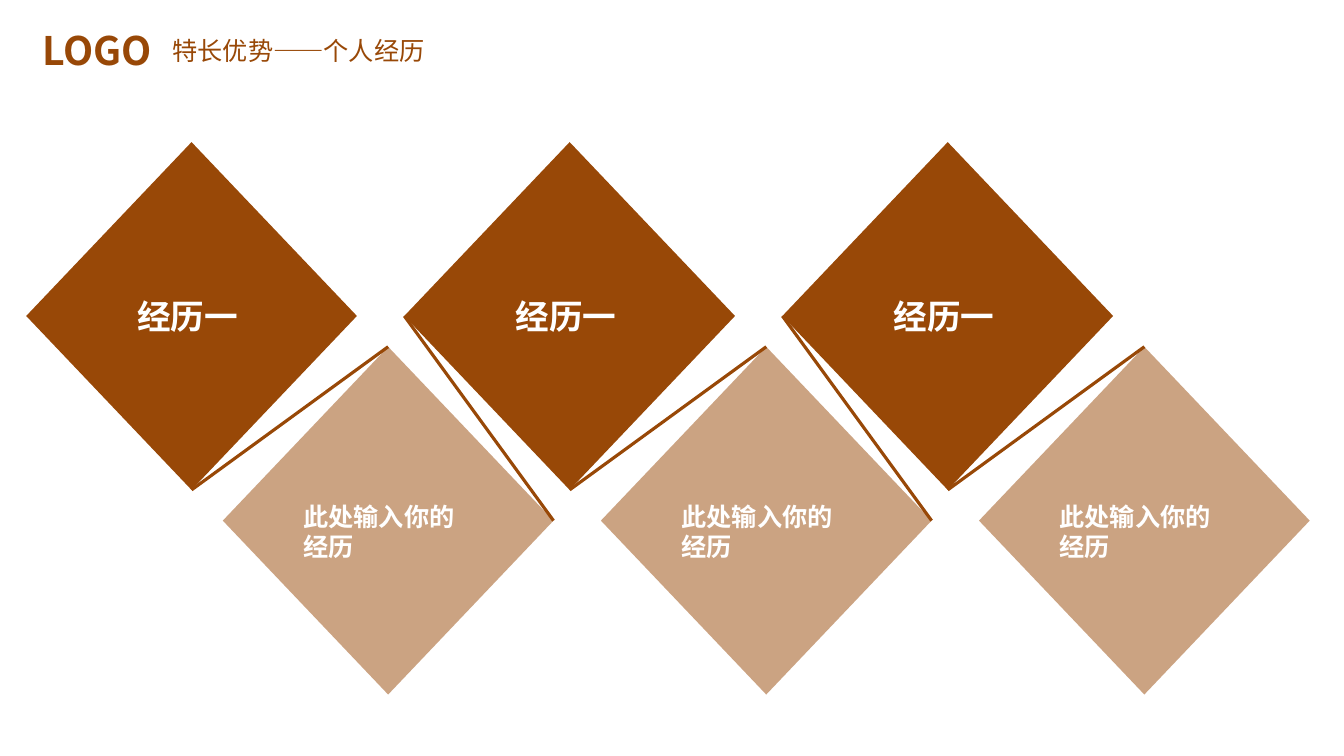
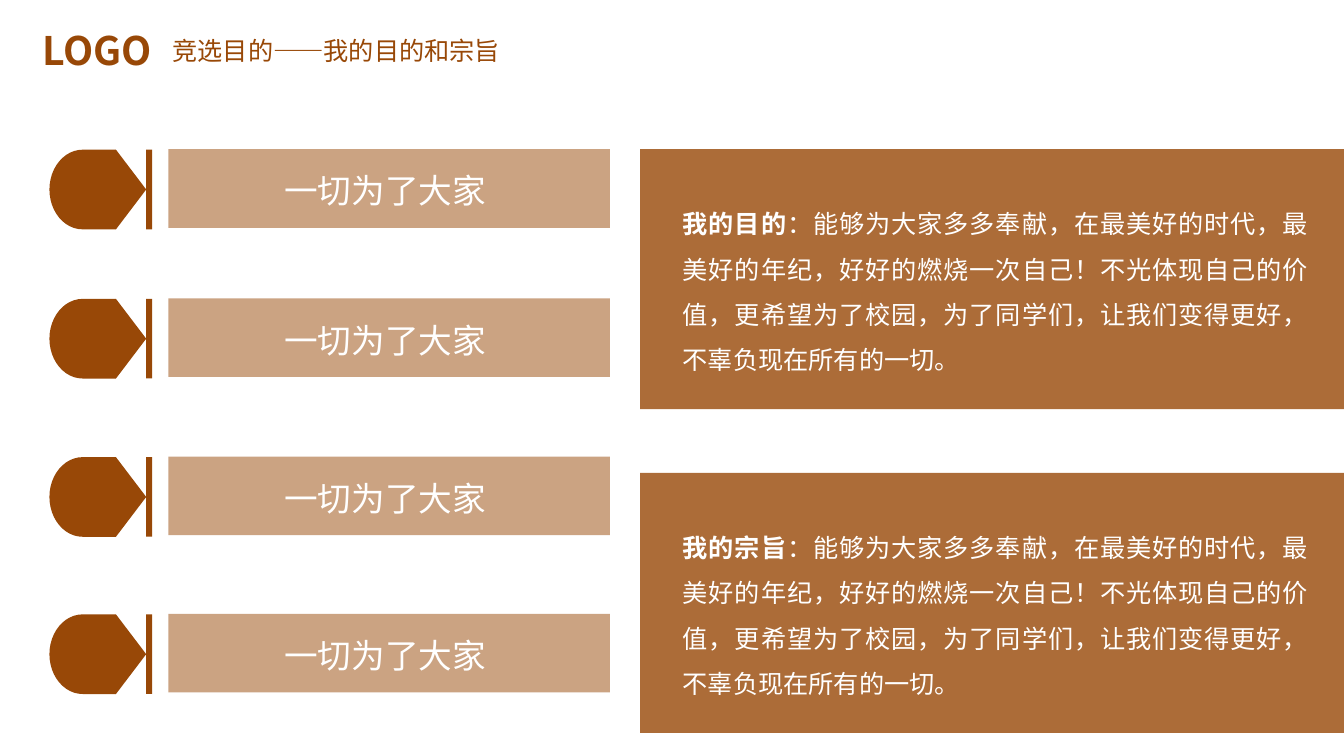
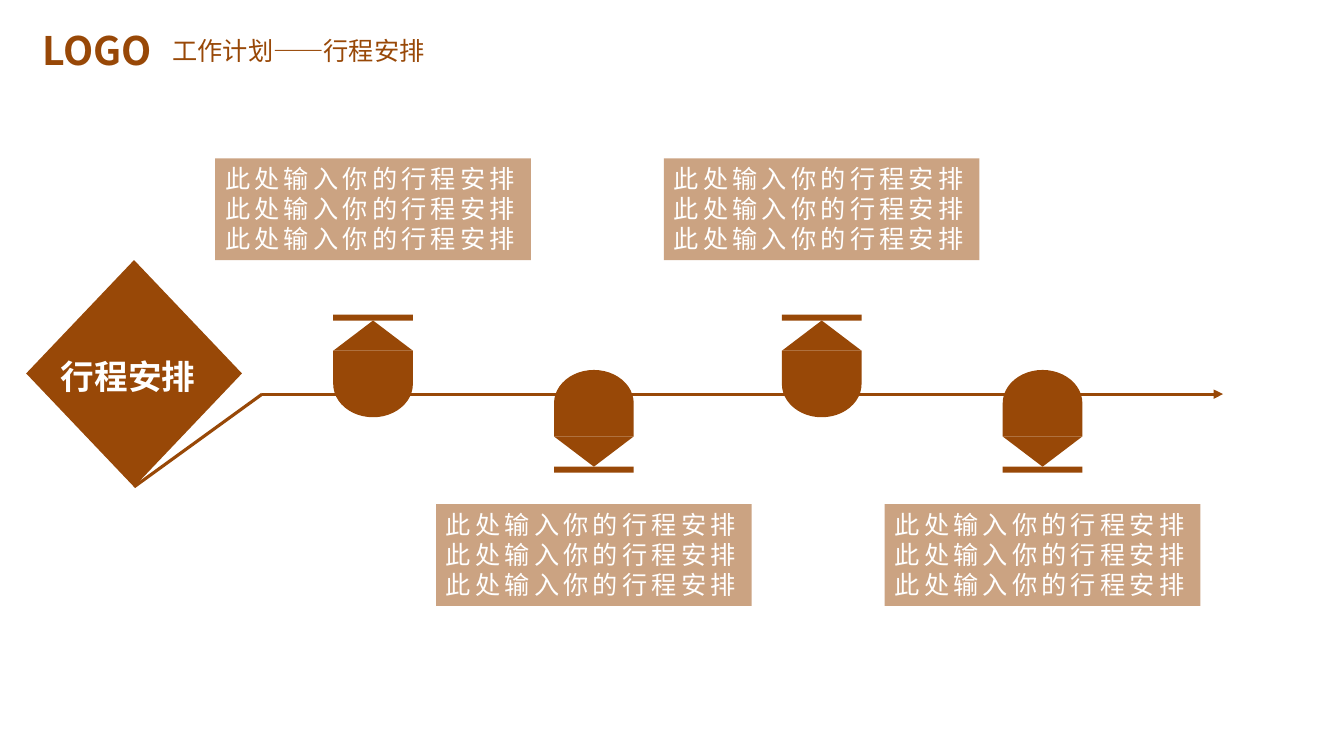
import math

import pptx
import pptx.dml.color
import pptx.enum.shapes
import pptx.enum.text
import pptx.oxml
import pptx.oxml.ns
import pptx.util

# Shared look
WIDTH, HEIGHT = 13.33, 7.5
FONT = "Noto Sans CJK SC"
BROWN, WHITE = "984807", "FFFFFF"
LINE_WIDTH = 2.25
LEFT = 0.26
TOP = 1.48

KIND = pptx.enum.shapes.MSO_SHAPE
ALIGN = pptx.enum.text.PP_ALIGN
inches = pptx.util.Inches
qualified = pptx.oxml.ns.qn


def color(hex_text):
    return pptx.dml.color.RGBColor.from_string(hex_text)


def add_child(parent, tag, **attributes):
    child = pptx.oxml.parse_xml(f"<{tag} {pptx.oxml.ns.nsdecls('a')}/>")
    for name, value in attributes.items():
        child.set(name, str(value))
    parent.append(child)
    return child


# Text
def write(frame, *lines, size=18, ink=WHITE, bold=False, align=ALIGN.LEFT,
          lead="", spacing=None, tracking=0, wrap=True,
          margins=(0.1, 0.05, 0.1, 0.05)):
    """Fill a text frame; lead is a bold opening, margins are left, top, right, bottom."""
    frame.word_wrap = wrap
    frame.auto_size = pptx.enum.text.MSO_AUTO_SIZE.NONE
    frame.vertical_anchor = pptx.enum.text.MSO_ANCHOR.TOP
    (frame.margin_left, frame.margin_top,
     frame.margin_right, frame.margin_bottom) = map(inches, margins)
    for index, line in enumerate(lines):
        para = frame.add_paragraph() if index else frame.paragraphs[0]
        para.alignment = align
        if spacing:
            para.line_spacing = spacing
        for text, heavy in ((lead, True), (line, bold)):
            if not text:
                continue
            span = para.add_run()
            span.text = text
            span.font.size = pptx.util.Pt(size)
            span.font.bold = heavy
            span.font.color.rgb = color(ink)
            span.font.name = FONT
            properties = span.font._element
            add_child(properties, "a:ea", typeface=FONT)
            if tracking:
                properties.set("spc", str(tracking * 100))


def add_text(page, left, top, width, height, *lines, **look):
    box = page.shapes.add_textbox(*map(inches, (left, top, width, height)))
    write(box.text_frame, *lines, **look)


# Shapes and lines
def add_shape(shapes, kind, left, top, width, height, opacity=100, rotation=0):
    shape = shapes.add_shape(kind, *map(inches, (left, top, width, height)))
    shape.shadow.inherit = False
    shape.fill.solid()
    shape.fill.fore_color.rgb = color(BROWN)
    shape.line.fill.background()
    shape.rotation = rotation % 360
    if opacity < 100:
        fill = shape.element.spPr.find(".//" + qualified("a:srgbClr"))
        add_child(fill, "a:alpha", val=opacity * 1000)
    return shape


def add_line(page, start, end, arrow=False):
    line = page.shapes.add_connector(
        pptx.enum.shapes.MSO_CONNECTOR.STRAIGHT, *map(inches, start + end))
    line.line.color.rgb = color(BROWN)
    line.line.width = pptx.util.Pt(LINE_WIDTH)
    if arrow:
        add_child(line.line._get_or_add_ln(), "a:tailEnd", type="triangle")
    add_child(line._element.spPr, "a:effectLst")


def add_pencil(page, tail_x, tail_y, angle):
    """Round body, tip and bar in a row from the tail; angle 0 points right."""
    across = 0.79
    group = page.shapes.add_group_shape()
    parts = (  # kind, distance of centre from tail, width, height, turn
        (KIND.RECTANGLE, 0.99, 0.06, across, 0),
        (KIND.FLOWCHART_DELAY, 0.33, 0.66, across, 180),
        (KIND.ISOSCELES_TRIANGLE, 0.81, across, 0.3, 90),
    )
    for kind, distance, width, height, turn in parts:
        center_x = tail_x + distance * math.cos(math.radians(angle))
        center_y = tail_y + distance * math.sin(math.radians(angle))
        add_shape(group.shapes, kind, center_x - width / 2, center_y - height / 2,
                  width, height, rotation=angle + turn)


def add_page(deck, heading):
    page = deck.slides.add_slide(deck.slide_layouts[5])
    title = page.shapes.title
    title.left, title.top, title.width, title.height = map(inches, (1.61, 0.3, 3.53, 0.4))
    write(title.text_frame, heading, ink=BROWN, wrap=False)
    add_text(page, LEFT, 0.21, 1.41, 0.57, "LOGO",
             size=28, ink=BROWN, bold=True, align=ALIGN.CENTER)
    return page


# Slides
def build_experience(deck):
    page = add_page(deck, "特长优势——个人经历")
    width, height, pitch, count = 3.28, 3.45, 3.75, 3
    upper_top, lower_top, shift = 1.41, 3.44, 1.95
    columns = [LEFT + pitch * index for index in range(count)]
    for left in columns:
        add_shape(page.shapes, KIND.DIAMOND, left, upper_top, width, height)
        add_text(page, left + 0.7, upper_top + 1.48, 1.88, 0.5, "经历一 ",
                 size=24, bold=True, align=ALIGN.CENTER)
        add_shape(page.shapes, KIND.DIAMOND, left + shift, lower_top, width, height, opacity=50)
        add_text(page, left + shift + 0.7, lower_top + 1.48, 1.88, 0.71,
                 "此处输入你的经历", bold=True)
    # Zigzag from corner to corner
    for index, left in enumerate(columns):
        middle = left + width / 2
        add_line(page, (middle, upper_top + height), (middle + shift, lower_top))
        if index < count - 1:
            add_line(page, (left + shift + width, lower_top + height / 2),
                     (left + pitch, upper_top + height / 2))


def build_purpose(deck):
    page = add_page(deck, "竞选目的——我的目的和宗旨")
    for top in (TOP, 2.96, 4.53, 6.09):
        add_pencil(page, 0.49, top + 0.4, 0)
        bar = add_shape(page.shapes, KIND.RECTANGLE, 1.67, top, 4.38, 0.78, opacity=50)
        write(bar.text_frame, "一切为了大家", size=24, align=ALIGN.CENTER,
              margins=(0.18, 0.21, 0.26, 0.05))
    pledge = ("：能够为大家多多奉献，在最美好的时代，最美好的年纪，好好的燃烧一次自己！"
              "不光体现自己的价值，更希望为了校园，为了同学们，让我们变得更好，"
              "不辜负现在所有的一切。")
    panel_left = 6.35
    for top, lead in ((TOP, "我的目的"), (4.69, "我的宗旨")):
        panel = add_shape(page.shapes, KIND.RECTANGLE, panel_left, top,
                          WIDTH - panel_left, 2.58, opacity=80)
        write(panel.text_frame, pledge, lead=lead, align=ALIGN.JUSTIFY, spacing=1.5,
              margins=(0.42, 0.44, 0.35, 0.05))


def build_schedule(deck):
    page = add_page(deck, "工作计划——行程安排")
    # Starting point and time line
    width, height, top = 2.14, 2.25, 2.58
    bend = (2.6, 3.91)
    add_shape(page.shapes, KIND.DIAMOND, LEFT, top, width, height)
    add_line(page, (LEFT + width / 2, top + height), bend)
    add_text(page, 0.49, 3.48, 1.56, 0.5, "行程安排",
             size=24, bold=True, align=ALIGN.CENTER)
    add_line(page, bend, (12.13, bend[1]), arrow=True)
    # Stops, alternately above and below the line
    card_width = 3.13
    for pair in range(2):
        for offset, tail_y, angle, card_top in ((0, 4.14, 270, 1.57), (2.19, 3.67, 90, 5)):
            center = 3.7 + 4.45 * pair + offset
            add_pencil(page, center, tail_y, angle)
            card = add_shape(page.shapes, KIND.RECTANGLE, center - card_width / 2,
                             card_top, card_width, 1.01, opacity=50)
            write(card.text_frame, *["此处输入你的行程安排"] * 3, tracking=3)


def main():
    deck = pptx.Presentation()
    deck.slide_width, deck.slide_height = inches(WIDTH), inches(HEIGHT)
    build_experience(deck)
    build_purpose(deck)
    build_schedule(deck)
    deck.save("out.pptx")


if __name__ == "__main__":
    main()
